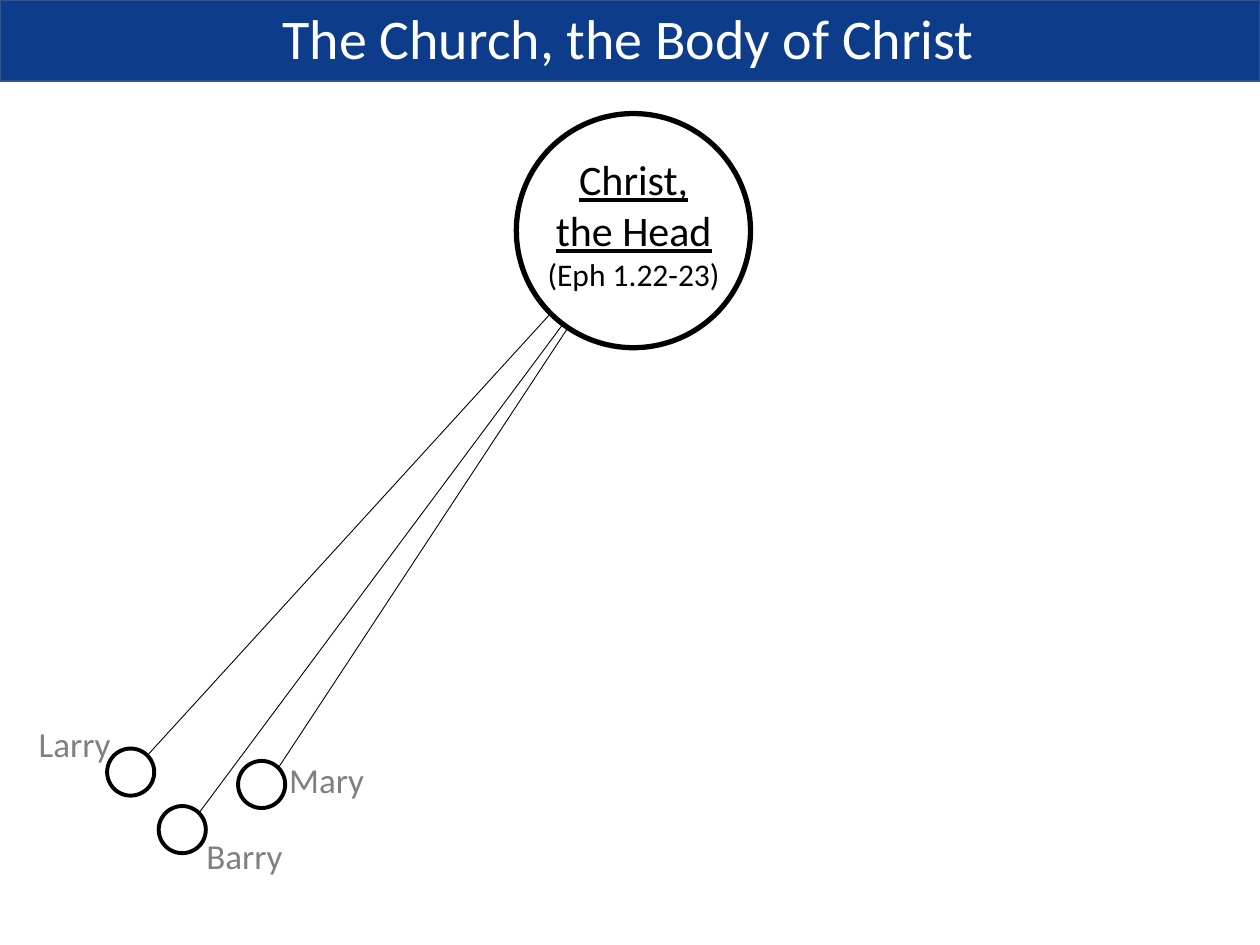
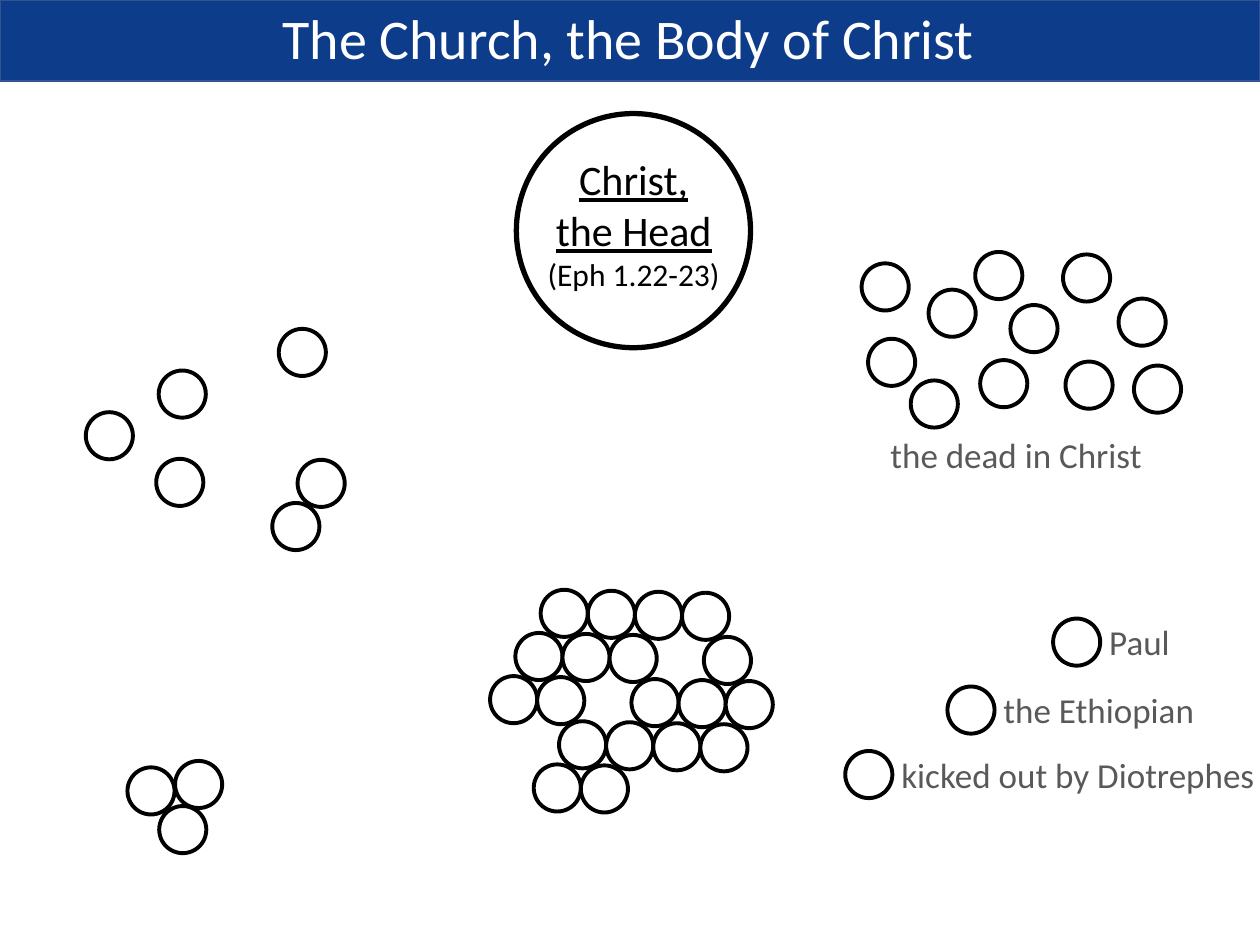
"""Builds two slides on the Church as the Body of Christ."""
from dataclasses import dataclass
from math import cos, radians, sin

from lxml import etree
from pptx import Presentation
from pptx.dml.color import RGBColor
from pptx.enum.shapes import MSO_CONNECTOR, MSO_SHAPE
from pptx.enum.text import MSO_ANCHOR, MSO_AUTO_SIZE, PP_ALIGN
from pptx.oxml.ns import qn
from pptx.util import Cm, Pt

RECT, OVAL = MSO_SHAPE.RECTANGLE, MSO_SHAPE.OVAL
STRAIGHT = MSO_CONNECTOR.STRAIGHT
LEFT, CENTER = PP_ALIGN.LEFT, PP_ALIGN.CENTER
TOP = MSO_ANCHOR.TOP
GROW = MSO_AUTO_SIZE.SHAPE_TO_FIT_TEXT
TITLE_ONLY = 5


@dataclass(frozen=True)
class Theme:
    """Colours, type sizes in points and line weights in points."""
    font: str = "Calibri"
    band: RGBColor = RGBColor(0x0C, 0x3C, 0x8A)
    band_edge: RGBColor = RGBColor(0x32, 0x54, 0x91)
    white: RGBColor = RGBColor(0xFF, 0xFF, 0xFF)
    black: RGBColor = RGBColor(0, 0, 0)
    grey: RGBColor = RGBColor(0x80, 0x80, 0x80)
    dark_grey: RGBColor = RGBColor(0x59, 0x59, 0x59)
    title_size: float = 32
    head_size: float = 24
    label_size: float = 20
    verse_size: float = 18
    head_line: float = 3
    member_line: float = 2.25
    band_line: float = 1
    bond_line: float = 0.5


THEME = Theme()
SLIDE_W, SLIDE_H = 25.4, 19.05
MEMBER = 0.95
LABEL_H = 1.12
TITLE = "The Church, the Body of Christ"
BAND_BOX = (0, 0, SLIDE_W, 1.63)
TITLE_BOX = (5.44, -0.05, 14.58, 1.63)
HEAD_BOX = (10.41, 2.29, 4.72, 4.72)

FAMILY_BOX = (0.53, 14.45)
FAMILY = [
    ("Larry", (1.63, 0.64), (0, 0, 1.98), 135),
    ("Mary", (4.27, 0.89), (5.05, 0.71, 2.03), 124),
    ("Barry", (2.67, 1.8), (3.38, 2.24, 2.06), 127),
]

TRIO_BOX = (2.57, 15.34)
TRIO = [(0, 0.13), (0.96, 0), (0.64, 0.91)]
SCATTERED_BOX = (1.73, 6.63)
SCATTERED = [(3.76, 3.51), (1.42, 2.62), (0, 1.68), (4.27, 2.64), (1.47, 0.84), (3.89, 0)]

CONGREGATION_BOX = (10.9, 11.89)
CONGREGATION = [(0, 1, 2, 3), (0, 1, 2, 4), (0, 1, 3, 4, 5), (2, 3, 4, 5), (2, 3)]
COLUMN_STEP, ROW_STEP = (0.95, 0.02), (-0.51, 0.87)

LONERS_BOX = (17.04, 12.37)
LONERS = [
    ("Paul", (4.19, 0.1), 1.75),
    ("the Ethiopian", (2.06, 1.47), 4.39),
    ("kicked out by Diotrephes", (0, 2.77), 7.7),
]

DEAD_BOX = (17.37, 5.08)
DEAD = [(0.13, 1.75), (1.35, 0.76), (0.99, 2.59), (2.39, 2.18), (4.06, 0.05), (5.49, 2.29),
        (0, 0.23), (3, 1.07), (4.11, 2.21), (5.18, 0.94), (2.29, 0)]


def cm(box):
    """Turns numbers into lengths."""
    return [Cm(n) for n in box]


def shift(box, offset):
    """Moves an offset into the box it belongs to."""
    return box[0] + offset[0], box[1] + offset[1], *offset[2:]


def add_shape(shapes, kind, box, fill=None, line=None, width=0):
    """Adds a flat shape with the given fill and outline."""
    sp = shapes.add_shape(kind, *cm(box))
    sp.shadow.inherit = False
    if fill is None:
        sp.fill.background()
    else:
        sp.fill.solid()
        sp.fill.fore_color.rgb = fill
    if line is None:
        sp.line.fill.background()
    else:
        sp.line.color.rgb = line
        sp.line.width = Pt(width)
    return sp


def write(tf, lines, color, align=LEFT):
    """Writes one paragraph for each (text, size, underline)."""
    tf.word_wrap = False
    tf.auto_size = GROW
    tf.vertical_anchor = TOP
    for i, (text, size, underline) in enumerate(lines):
        p = tf.add_paragraph() if i else tf.paragraphs[0]
        p.alignment = align
        r = p.add_run()
        r.text = text
        r.font.name = THEME.font
        r.font.size = Pt(size)
        r.font.color.rgb = color
        r.font.underline = underline


def add_label(shapes, text, box, color):
    """Adds a one-line label at left, top and width."""
    sp = shapes.add_textbox(*cm((*box, LABEL_H)))
    write(sp.text_frame, [(text, THEME.label_size, False)], color)


def add_members(shapes, box, offsets):
    """Adds one circle for each member of a group."""
    for offset in offsets:
        add_shape(shapes, OVAL, (*shift(box, offset), MEMBER, MEMBER),
                  THEME.white, THEME.black, THEME.member_line)


def rim_point(box, degrees):
    """Finds a point on a circle, clockwise from its right side."""
    left, top, size = box[:3]
    radius, angle = size / 2, radians(degrees)
    return left + radius * (1 + cos(angle)), top + radius * (1 + sin(angle))


def add_bond(shapes, start, end):
    """Draws a thin line between two points."""
    bond = shapes.add_connector(STRAIGHT, *cm((*start, *end)))
    bond.line.color.rgb = THEME.black
    bond.line.width = Pt(THEME.bond_line)
    etree.SubElement(bond.element.spPr, qn("a:effectLst"))


def add_title(s, text):
    """Places the title over its band."""
    band = add_shape(s.shapes, RECT, BAND_BOX, THEME.band, THEME.band_edge, THEME.band_line)
    title = s.shapes.title
    title.left, title.top, title.width, title.height = cm(TITLE_BOX)
    write(title.text_frame, [(text, THEME.title_size, False)], THEME.white)
    band.element.addnext(title.element)


def add_head(shapes, box):
    """Draws the ringed head with its wording."""
    sp = add_shape(shapes, RECT, shift(box, (0.36, 0.69, 4.01, 3.07)), THEME.white)
    write(sp.text_frame, [("Christ,", THEME.head_size, True),
                          ("the Head", THEME.head_size, True),
                          ("(Eph 1.22-23)", THEME.verse_size, False)], THEME.black, CENTER)
    add_shape(shapes, OVAL, box, None, THEME.black, THEME.head_line)


def add_family(shapes, box):
    """Draws named members, each bound to the head."""
    add_members(shapes, box, [circle for _, circle, _, _ in FAMILY])
    for name, circle, label, head_angle in FAMILY:
        add_label(shapes, name, shift(box, label), THEME.grey)
        member = (*shift(box, circle), MEMBER)
        add_bond(shapes, rim_point(member, -45), rim_point(HEAD_BOX, head_angle))


def add_congregation(shapes, box):
    """Packs members into a slanted lattice with gaps."""
    add_members(shapes, box, [
        (col * COLUMN_STEP[0] + row * ROW_STEP[0], col * COLUMN_STEP[1] + row * ROW_STEP[1])
        for row, cols in enumerate(CONGREGATION) for col in cols])


def add_loners(shapes, box):
    """Draws single members, each with a label at its right."""
    add_members(shapes, box, [circle for _, circle, _ in LONERS])
    for text, circle, width in LONERS:
        left, top = shift(box, circle)
        add_label(shapes, text, (left + 0.88, top - 0.08, width), THEME.dark_grey)


def add_dead(shapes, box):
    """Groups the dead in Christ with their caption."""
    group = shapes.add_group_shape()
    add_label(group.shapes, "the dead in Christ", shift(box, (0.33, 3.53, 5.64)), THEME.dark_grey)
    add_members(group.shapes, box, DEAD)


def add_body_slide(prs):
    """Starts a slide with the shared title and head."""
    s = prs.slides.add_slide(prs.slide_layouts[TITLE_ONLY])
    add_title(s, TITLE)
    add_head(s.shapes, HEAD_BOX)
    return s.shapes


def main():
    """Builds and saves the presentation."""
    prs = Presentation()
    prs.slide_width, prs.slide_height = cm((SLIDE_W, SLIDE_H))

    add_family(add_body_slide(prs), FAMILY_BOX)

    shapes = add_body_slide(prs)
    add_members(shapes, TRIO_BOX, TRIO)
    add_congregation(shapes, CONGREGATION_BOX)
    add_loners(shapes, LONERS_BOX)
    add_members(shapes, SCATTERED_BOX, SCATTERED)
    add_dead(shapes, DEAD_BOX)

    prs.save("out.pptx")


if __name__ == "__main__":
    main()
